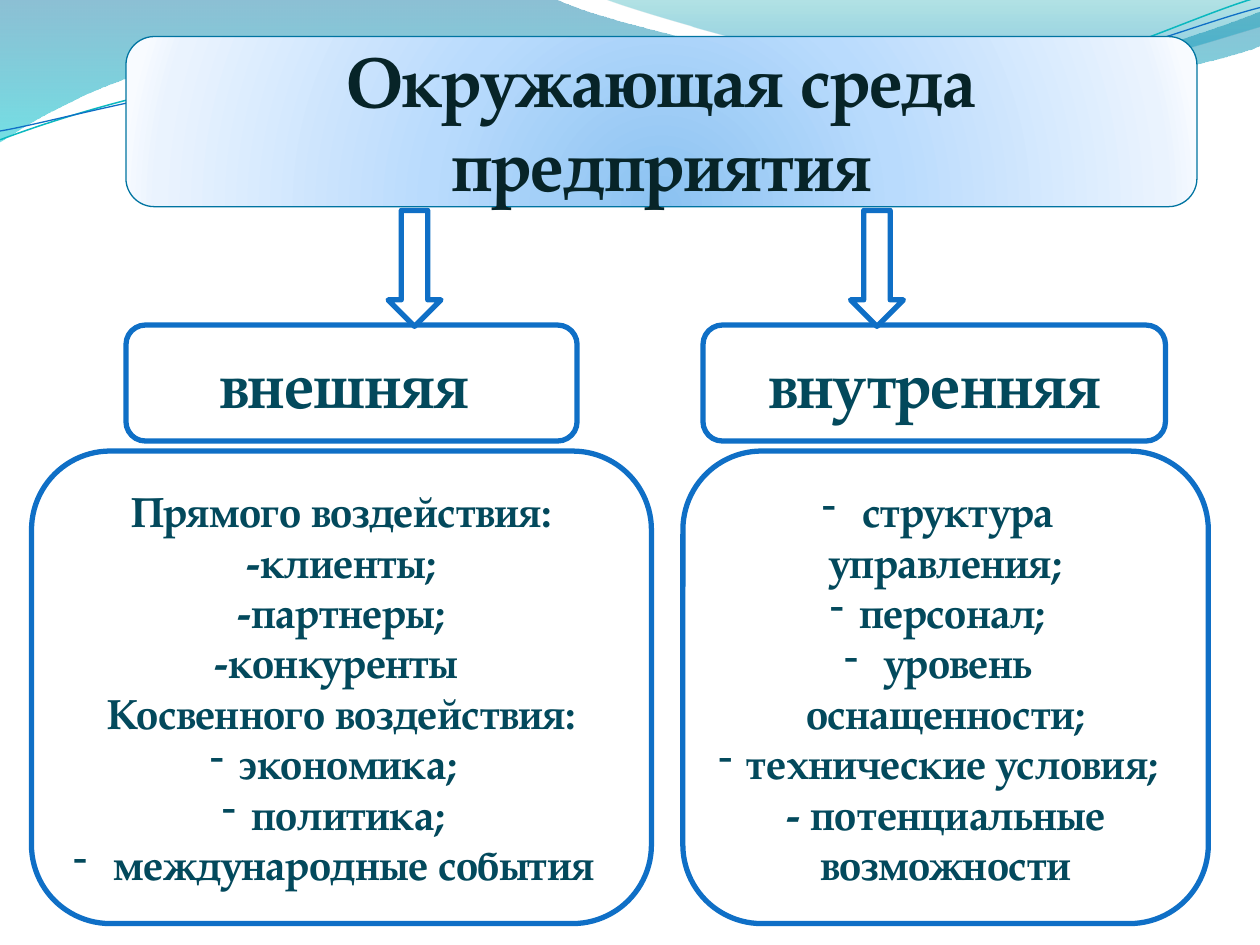
import math

from lxml import etree
from pptx import Presentation
from pptx import util as u
from pptx.dml.color import RGBColor
from pptx.enum import shapes, text
from pptx.oxml import ns

FONT = "TeX Gyre Pagella"
COLORS = {
    "white": "FFFFFF", "outline": "0F6FC6", "text": "03495C",
    "title": "072428", "title_line": "0074A1", "teal_line": "0AB8BF",
}
# Gradient stops: position, colour, opacity (all but the colour in percent)
GRADIENTS = {
    "left_wave": [(0, "0074A1", 45), (100, "00C6CF", 55)],
    "right_wave": [(0, "00A1A9", 30), (80, "008BBF", 45)],
    "title": [(0, "8BC2F1", 100), (43, "B9DBFD", 100),
              (93, "EAF3FE", 100), (100, "F8FBFF", 100)],
}

# Each wave is a start point, then line ends (2 numbers) or curves (6 numbers)
LEFT_WAVE = [(0, 0), (4.4, -0.01), (4.76, 0.17, 6.64, 0.63, 7.58, 0.63),
             (8.53, 0.63, 9.58, 0.26, 10, 0.09), (10.01, 0.36),
             (9.83, 0.44, 8.7, 0.76, 7.46, 0.75),
             (6.22, 0.75, 3.82, 0.28, 2.57, 0.34),
             (1.29, 0.36, 0.46, 0.83, -0.01, 1.13)]
RIGHT_WAVE = [(4.79, -0.01), (5.09, 0.11, 6.82, 0.62, 7.69, 0.65),
              (8.56, 0.69, 9.61, 0.32, 10, 0.21), (10, 0)]
TEAL_CURVE = [(0, 1.11), (0.48, 0.93, 1.58, 0.57, 2.77, 0.52),
              (3.95, 0.47, 5.93, 0.89, 7.13, 0.8),
              (8.33, 0.71, 9.38, 0.15, 9.98, -0.02)]
BLUE_CURVE = [(0, 1.04), (0.47, 0.96, 1.64, 0.61, 2.83, 0.56),
              (4.03, 0.51, 5.97, 0.84, 7.17, 0.75),
              (8.36, 0.67, 9.41, 0.21, 10, 0.06)]
CURVE_TILT = -2.7
CURVE_CENTER = (4.99, 0.58)

# Paragraphs: text, bulleted or not
EXTERNAL = [("Прямого воздействия:", False), ("-клиенты;", False),
            ("-партнеры;", False), ("-конкуренты ", False),
            ("Косвенного воздействия:", False), ("экономика;", True),
            ("политика;", True), (" международные события", True)]
INTERNAL = [(" структура управления;", True), ("персонал;", True),
            (" уровень оснащенности;", True), ("технические условия;", True),
            ("- потенциальные возможности", False)]


def rgb(name):
    return RGBColor.from_string(COLORS[name])


def add_element(parent, tag, **attributes):
    element = etree.SubElement(parent, ns.qn(tag))
    for name, value in attributes.items():
        element.set(name, str(value))
    return element


def set_gradient(shape, name, circular=False):
    shape.fill.gradient()
    gradient = shape.element.spPr.find(ns.qn("a:gradFill"))
    for child in list(gradient):
        gradient.remove(child)
    stops = add_element(gradient, "a:gsLst")
    for position, color, opacity in GRADIENTS[name]:
        stop = add_element(stops, "a:gs", pos=position * 1000)
        stop_color = add_element(stop, "a:srgbClr", val=color)
        if opacity < 100:
            add_element(stop_color, "a:alpha", val=opacity * 1000)
    if circular:
        focus = add_element(gradient, "a:path", path="circle")
        add_element(focus, "a:fillToRect", l=50000, t=130000, r=50000, b=-30000)
    else:
        add_element(gradient, "a:lin", ang=5400000, scaled=0)


def set_line(shape, color, width):
    shape.line.color.rgb = rgb(color)
    shape.line.width = u.Pt(width)


def turn(point, degrees):
    """Turn a point clockwise about the centre of the curves."""
    angle = math.radians(degrees)
    x, y = point[0] - CURVE_CENTER[0], point[1] - CURVE_CENTER[1]
    return (CURVE_CENTER[0] + x * math.cos(angle) - y * math.sin(angle),
            CURVE_CENTER[1] + x * math.sin(angle) + y * math.cos(angle))


def add_wave(slide, segments, closed=False, tilt=0):
    # Level the points first, since the shape itself carries the tilt
    segments = [[tuple(u.Inches(value) for value in turn(pair, -tilt))
                 for pair in zip(segment[::2], segment[1::2])]
                for segment in segments]
    ends = [segment[-1] for segment in segments]
    builder = slide.shapes.build_freeform(*ends[0])
    builder.add_line_segments(ends[1:], close=closed)
    shape = builder.convert_to_shape()
    left, top = shape.left, shape.top

    # Bend the straight pieces that have control points
    lines = list(shape.element.spPr.iter(ns.qn("a:lnTo")))
    for line, points in zip(lines, segments[1:]):
        if len(points) == 3:
            curve = etree.Element(ns.qn("a:cubicBezTo"))
            for x, y in points:
                add_element(curve, "a:pt", x=x - left, y=y - top)
            line.getparent().replace(line, curve)
    shape.rotation = tilt
    shape.shadow.inherit = False
    return shape


def add_filled_wave(slide, segments, gradient):
    shape = add_wave(slide, segments, closed=True)
    set_gradient(shape, gradient)
    shape.line.fill.background()


def add_curve(slide, segments, color, width):
    shape = add_wave(slide, segments, tilt=CURVE_TILT)
    shape.fill.background()
    set_line(shape, color, width)


def add_outlined(slide, kind, left, top, width, height):
    shape = slide.shapes.add_shape(kind, u.Inches(left), u.Inches(top),
                                   u.Inches(width), u.Inches(height))
    shape.shadow.inherit = False
    shape.fill.solid()
    shape.fill.fore_color.rgb = rgb("white")
    set_line(shape, "outline", 3)
    return shape


def add_box(slide, position, paragraphs, size, color="text"):
    shape = add_outlined(slide, shapes.MSO_SHAPE.ROUNDED_RECTANGLE, *position)
    frame = shape.text_frame
    frame.word_wrap = True
    frame.vertical_anchor = text.MSO_ANCHOR.MIDDLE
    for index, (wording, bulleted) in enumerate(paragraphs):
        paragraph = frame.add_paragraph() if index else frame.paragraphs[0]
        paragraph.text = wording
        paragraph.alignment = text.PP_ALIGN.CENTER
        font = paragraph.font
        font.name, font.size, font.bold = FONT, u.Pt(size), True
        font.color.rgb = rgb(color)
        if bulleted:
            properties = paragraph._p.get_or_add_pPr()
            properties.insert(0, etree.Element(ns.qn("a:buFontTx")))
            properties.insert(1, etree.Element(ns.qn("a:buChar"), char="-"))
    return shape


def add_title(slide):
    shape = add_box(slide, (1, 0.29, 8.5, 1.35),
                    [("Окружающая среда предприятия", False)], 40, "title")
    set_gradient(shape, "title", circular=True)
    set_line(shape, "title_line", 0.75)


def main():
    presentation = Presentation()
    presentation.slide_width = u.Inches(10)
    presentation.slide_height = u.Inches(7.5)
    slide = presentation.slides.add_slide(presentation.slide_layouts[6])

    # Wavy background
    add_filled_wave(slide, LEFT_WAVE, "left_wave")
    add_filled_wave(slide, RIGHT_WAVE, "right_wave")
    add_curve(slide, TEAL_CURVE, "teal_line", 0.85)
    add_curve(slide, BLUE_CURVE, "outline", 0.75)

    # Title, then one branch per kind of environment
    add_title(slide)
    branches = [
        ("внешняя ", (1, 3.58), EXTERNAL, (0.25, 4.92), 3.08),
        ("внутренняя", (5.58, 3.67), INTERNAL, (5.42, 4.17), 6.75),
    ]
    for heading, (head_left, head_width), items, (left, width), arrow_left in branches:
        add_box(slide, (head_left, 2.58, head_width, 0.92), [(heading, False)], 36)
        add_box(slide, (left, 3.58, width, 3.75), items, 24)
        add_outlined(slide, shapes.MSO_SHAPE.DOWN_ARROW, arrow_left, 1.67, 0.42, 0.92)

    presentation.save("out.pptx")


if __name__ == "__main__":
    main()
